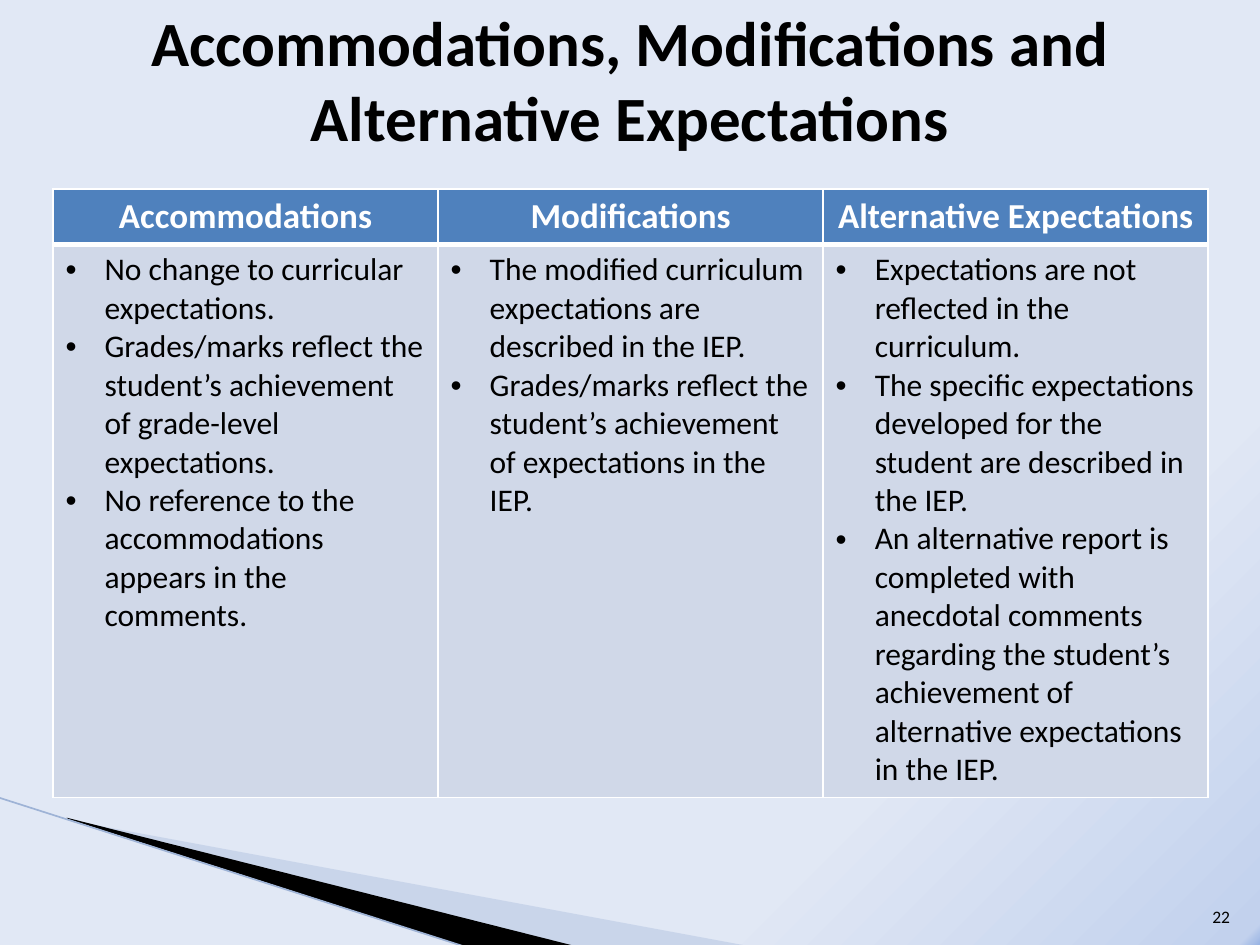
from lxml import etree
from pptx import Presentation
from pptx.dml.color import RGBColor
from pptx.enum.shapes import MSO_CONNECTOR
from pptx.enum.text import MSO_ANCHOR, PP_ALIGN
from pptx.oxml import parse_xml
from pptx.oxml.ns import nsdecls, qn
from pptx.util import Inches, Pt

LEFT, CENTER, RIGHT = PP_ALIGN.LEFT, PP_ALIGN.CENTER, PP_ALIGN.RIGHT
MIDDLE, BOTTOM = MSO_ANCHOR.MIDDLE, MSO_ANCHOR.BOTTOM
STRAIGHT = MSO_CONNECTOR.STRAIGHT

COLORS = {
    "black": "000000",
    "white": "FFFFFF",
    "header": "4F81BD",
    "body": "D0D8E8",
    "pale_wedge": "A7B9DB",
    "edge": "9EB3D6",
}
BACKGROUND_STOPS = [(0, "9AB5E4"), (1, "C2D1ED"), (25, "E1E8F5")]

COLUMNS = {
    "Accommodations": [
        "No change to curricular expectations.",
        "Grades/marks reflect the student’s achievement of grade-level expectations.",
        "No reference to the accommodations appears in the comments.",
    ],
    "Modifications": [
        "The modified curriculum expectations are described in the IEP.",
        "Grades/marks reflect the student’s achievement of expectations in the IEP.",
    ],
    "Alternative Expectations": [
        "Expectations are not reflected in the curriculum.",
        "The specific expectations developed for the student are described in the IEP.",
        "An alternative report is completed with anecdotal comments regarding the "
        "student’s achievement of alternative expectations in the IEP.",
    ],
}


def write_text(frame, lines, size, color, alignment, bold=False, bullet=False):
    for index, line in enumerate(lines):
        paragraph = frame.paragraphs[0] if index == 0 else frame.add_paragraph()
        paragraph.alignment = alignment
        if bullet:
            properties = paragraph._p.get_or_add_pPr()
            properties.set("marL", str(Inches(0.31)))
            properties.set("indent", str(Inches(-0.31)))
            etree.SubElement(properties, qn("a:buFont")).set("typeface", "Arial")
            etree.SubElement(properties, qn("a:buChar")).set("char", "•")
        run = paragraph.add_run()
        run.text = line
        for name, value in {"name": "Calibri", "size": Pt(size), "bold": bold}.items():
            setattr(run.font, name, value)
        run.font.color.rgb = RGBColor.from_string(COLORS[color])


def format_cell(cell, fill, bottom_width):
    properties = cell._tc.get_or_add_tcPr()
    for side, width in {"L": 1, "R": 1, "T": 1, "B": bottom_width}.items():
        properties.append(parse_xml(
            f'<a:ln{side} {nsdecls("a")} w="{Pt(width)}"><a:solidFill>'
            f'<a:srgbClr val="{COLORS["white"]}"/></a:solidFill></a:ln{side}>'))
    cell.fill.solid()
    cell.fill.fore_color.rgb = RGBColor.from_string(COLORS[fill])


presentation = Presentation()
presentation.slide_width = Inches(10)
presentation.slide_height = Inches(7.5)
slide = presentation.slides.add_slide(presentation.slide_layouts[6])

# Background glow from the bottom right corner
stops = "".join(f'<a:gs pos="{position * 1000}"><a:srgbClr val="{color}"/></a:gs>'
                for position, color in BACKGROUND_STOPS)
slide.element.cSld.insert(0, parse_xml(
    f'<p:bg {nsdecls("p", "a")}><p:bgPr><a:gradFill><a:gsLst>{stops}</a:gsLst>'
    '<a:path path="circle"><a:fillToRect l="100000" t="100000"/></a:path>'
    '</a:gradFill><a:effectLst/></p:bgPr></p:bg>'))

# Wedges in the bottom left corner
wedges = [
    ("pale_wedge", 40, [(0.55, 6.51), (5.95, 7.51), (4.56, 7.51), (0.55, 6.5)]),
    ("black", 100, [(0.53, 6.49), (4.57, 7.51), (3.72, 7.52), (0.54, 6.5)]),
]
for color, opacity, points in wedges:
    corners = [(Inches(x), Inches(y)) for x, y in points]
    builder = slide.shapes.build_freeform(*corners[0])
    builder.add_line_segments(corners[1:], close=True)
    wedge = builder.convert_to_shape()
    wedge.shadow.inherit = False
    wedge.fill.solid()
    wedge.fill.fore_color.rgb = RGBColor.from_string(COLORS[color])
    wedge.line.fill.background()
    if opacity < 100:
        color_element = wedge._element.spPr.find(f'{qn("a:solidFill")}/{qn("a:srgbClr")}')
        etree.SubElement(color_element, qn("a:alpha")).set("val", str(opacity * 1000))

edge = slide.shapes.add_connector(
    STRAIGHT, Inches(-0.01), Inches(6.33), Inches(3.71), Inches(7.52))
edge.line.color.rgb = RGBColor.from_string(COLORS["edge"])
edge.line.width = Pt(0.95)
etree.SubElement(edge._element.spPr, qn("a:effectLst"))

# Comparison table
table = slide.shapes.add_table(
    2, len(COLUMNS), Inches(0.42), Inches(1.5), Inches(9.17), Inches(4.83)).table
table.rows[0].height = Inches(0.44)
table.rows[1].height = Inches(4.39)
for column, (heading, points) in enumerate(COLUMNS.items()):
    header, body = table.cell(0, column), table.cell(1, column)
    format_cell(header, "header", 3)
    write_text(header.text_frame, [heading], 20, "white", CENTER, bold=True)
    format_cell(body, "body", 1)
    write_text(body.text_frame, points, 18, "black", LEFT, bullet=True)

# Title and slide number
labels = [
    ("Accommodations, Modifications and Alternative Expectations",
     (0.5, 0, 9, 1.25), 36, CENTER, MIDDLE, True),
    ("22", (9.46, 7.01, 0.4, 0.4), 10, RIGHT, BOTTOM, False),
]
for text, box, size, alignment, anchor, bold in labels:
    frame = slide.shapes.add_textbox(*map(Inches, box)).text_frame
    frame.word_wrap = True
    frame.vertical_anchor = anchor
    write_text(frame, [text], size, "black", alignment, bold)

presentation.save("out.pptx")
